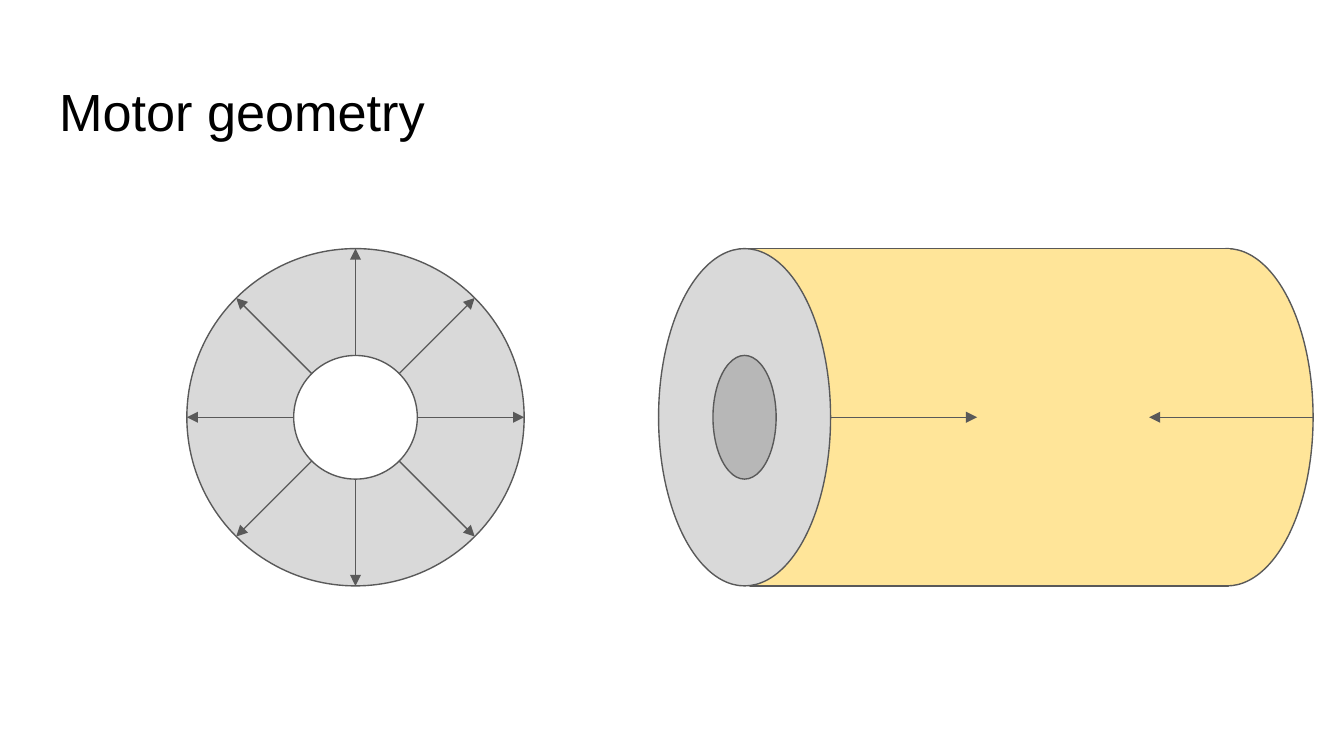
from math import cos, radians, sin

from lxml.etree import SubElement
from pptx import Presentation
from pptx.dml.color import RGBColor
from pptx.enum.shapes import MSO_CONNECTOR, MSO_SHAPE
from pptx.enum.text import MSO_ANCHOR, MSO_AUTO_SIZE, PP_ALIGN
from pptx.oxml.ns import qn
from pptx.util import Pt

PX = 4572  # 200 px to the inch
GREY, YELLOW, LINE = "D9D9D9", "FFE599", "595959"


def add_shape(kind, x, y, w, h, fill, line=LINE):
    sp = s.shapes.add_shape(kind, x * PX, y * PX, w * PX, h * PX)
    sp.shadow.inherit = False
    sp.fill.solid()
    sp.fill.fore_color.rgb = RGBColor.from_string(fill)
    sp.line.color.rgb = RGBColor.from_string(line)
    sp.line.width = Pt(0.75)


def add_arrow(x1, y1, x2, y2):
    ends = [round(v * PX) for v in (x1, y1, x2, y2)]
    c = s.shapes.add_connector(MSO_CONNECTOR.STRAIGHT, *ends)
    c.line.color.rgb = RGBColor.from_string(LINE)
    c.line.width = Pt(0.75)
    SubElement(c.line._get_or_add_ln(), qn("a:tailEnd"), type="triangle")
    SubElement(c._element.spPr, qn("a:effectLst"))


prs = Presentation()
prs.slide_width, prs.slide_height = 2000 * PX, 1125 * PX
s = prs.slides.add_slide(prs.slide_layouts[5])

# Title
title = s.shapes.title
title.left, title.top, title.width, title.height = 68 * PX, 98 * PX, 1864 * PX, 126 * PX
tf = title.text_frame
tf.word_wrap = True
tf.auto_size = MSO_AUTO_SIZE.NONE
tf.vertical_anchor = MSO_ANCHOR.TOP
tf.margin_left = tf.margin_right = tf.margin_top = tf.margin_bottom = 20 * PX
p = tf.paragraphs[0]
p.alignment = PP_ALIGN.LEFT
r = p.add_run()
r.text = "Motor geometry"
r.font.name = "Arial"
r.font.size = Pt(28)
r.font.color.rgb = RGBColor.from_string("000000")

# Both views share the axis height and the two radii
cy, outer, inner = 621, 251, 92
ring_x, face_x, end_x = 529, 1108, 1826
face_rx, bore_rx = 128, 47

# Cylinder: far end, body, then a strip over the seam between them
add_shape(MSO_SHAPE.OVAL, end_x - face_rx, cy - outer, 2 * face_rx, 2 * outer, YELLOW)
add_shape(MSO_SHAPE.RECTANGLE, 1116, cy - outer, 712, 2 * outer, YELLOW)
add_shape(MSO_SHAPE.RECTANGLE, 1804, cy - outer + 2, 26, 2 * outer - 4, YELLOW, YELLOW)

# Ring, near face and bore
for x, rx, ry, fill in [
    (ring_x, outer, outer, GREY),
    (ring_x, inner, inner, "FFFFFF"),
    (face_x, face_rx, outer, GREY),
    (face_x, bore_rx, inner, "B7B7B7"),
]:
    add_shape(MSO_SHAPE.OVAL, x - rx, cy - ry, 2 * rx, 2 * ry, fill)

# Radial arrows, from the hole to the rim
for angle in range(0, 360, 45):
    dx, dy = cos(radians(angle)), sin(radians(angle))
    add_arrow(ring_x + inner * dx, cy + inner * dy, ring_x + outer * dx, cy + outer * dy)

# Axial arrows, inwards from each end
add_arrow(face_x + face_rx, cy, 1454, cy)
add_arrow(end_x + face_rx, cy, 1710, cy)

prs.save("out.pptx")
